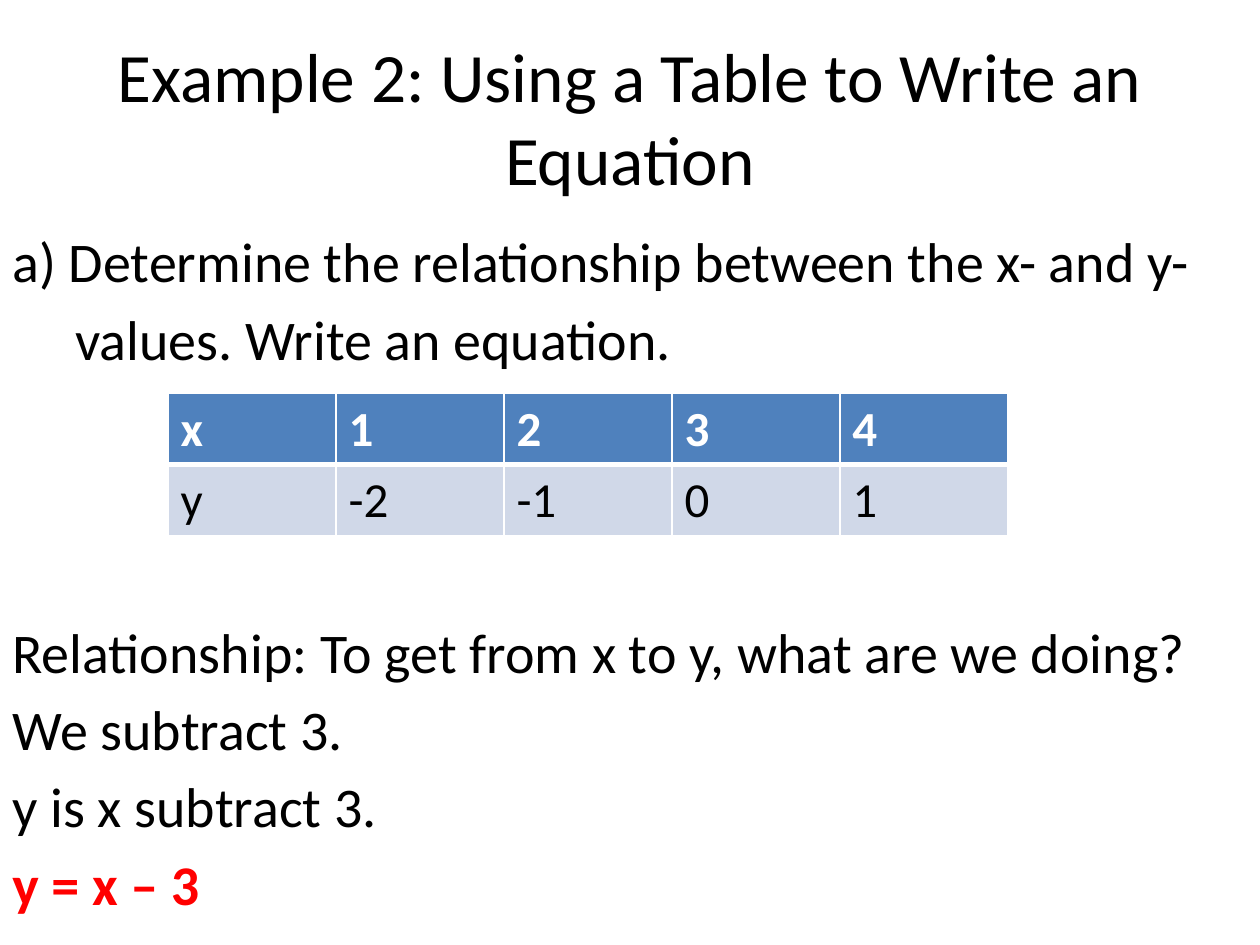
"""Build the slide on writing an equation from a table of values."""
from lxml.etree import SubElement
from pptx import Presentation
from pptx.dml.color import RGBColor
from pptx.enum.text import MSO_ANCHOR, MSO_AUTO_SIZE, PP_ALIGN
from pptx.oxml.ns import qn
from pptx.util import Inches, Pt

BLACK = RGBColor(0x00, 0x00, 0x00)
WHITE = RGBColor(0xFF, 0xFF, 0xFF)
RED = RGBColor(0xFF, 0x00, 0x00)
BLUE = RGBColor(0x4F, 0x81, 0xBD)
PALE_BLUE = RGBColor(0xD0, 0xD8, 0xE8)


def add_run(paragraph, text, size, color=BLACK, bold=False):
    run = paragraph.add_run()
    run.text = text
    run.font.name = "Calibri"
    run.font.size = Pt(size)
    run.font.color.rgb = color
    run.font.bold = bold


def add_border(cell, side, width):
    line = SubElement(cell._tc.get_or_add_tcPr(), qn(f"a:{side}"), w=str(Pt(width)))
    fill = SubElement(line, qn("a:solidFill"))
    SubElement(fill, qn("a:srgbClr"), val=str(WHITE))


presentation = Presentation()
presentation.slide_width = Inches(10)
presentation.slide_height = Inches(7.5)
width, height = presentation.slide_width, presentation.slide_height
slide = presentation.slides.add_slide(presentation.slide_layouts[5])

title = slide.shapes.title
title.left, title.top = int(width * 0.05), int(height * 0.04)
title.width, title.height = int(width * 0.9), Inches(1.25)
title.text_frame.auto_size = MSO_AUTO_SIZE.NONE
title.text_frame.vertical_anchor = MSO_ANCHOR.MIDDLE
heading = title.text_frame.paragraphs[0]
heading.alignment = PP_ALIGN.CENTER
add_run(heading, "Example 2: Using a Table to Write an Equation", 39.6)

body_top = Inches(1.75)
body = slide.shapes.add_textbox(0, body_top, width, height - body_top).text_frame
body.word_wrap = True
line_gap, table_gap = 5.8, 140.4
steps = [
    ("a) Determine the relationship between the x- and y-", line_gap, 0, BLACK),
    ("values. Write an equation.", line_gap, 0.5, BLACK),
    ("Relationship: To get from x to y, what are we doing?", table_gap, 0, BLACK),
    ("We subtract 3.", line_gap, 0, BLACK),
    ("y is x subtract 3.", line_gap, 0, BLACK),
    ("y = x – 3", line_gap, 0, RED),
]
for index, (text, gap, indent, color) in enumerate(steps):
    step = body.add_paragraph() if index else body.paragraphs[0]
    step.space_before = Pt(gap)
    step._p.get_or_add_pPr().set("marL", str(Inches(indent)))
    add_run(step, text, 32, color, bold=color == RED)

value_rows = [
    (["x", "1", "2", "3", "4"], BLUE, WHITE, 3),
    (["y", "-2", "-1", "0", "1"], PALE_BLUE, BLACK, 1),
]
column = width * 2 // 15
values = slide.shapes.add_table(
    len(value_rows), 5, column, Inches(3.12), 5 * column, Inches(1.13)
).table
for row, (entries, background, color, rule) in enumerate(value_rows):
    for position, entry in enumerate(entries):
        cell = values.cell(row, position)
        top_rule = 1 if row == 0 else value_rows[row - 1][3]
        for side, weight in zip(("lnL", "lnR", "lnT", "lnB"), (1, 1, top_rule, rule)):
            add_border(cell, side, weight)
        cell.fill.solid()
        cell.fill.fore_color.rgb = background
        add_run(cell.text_frame.paragraphs[0], entry, 28, color, bold=row == 0)

presentation.save("out.pptx")
